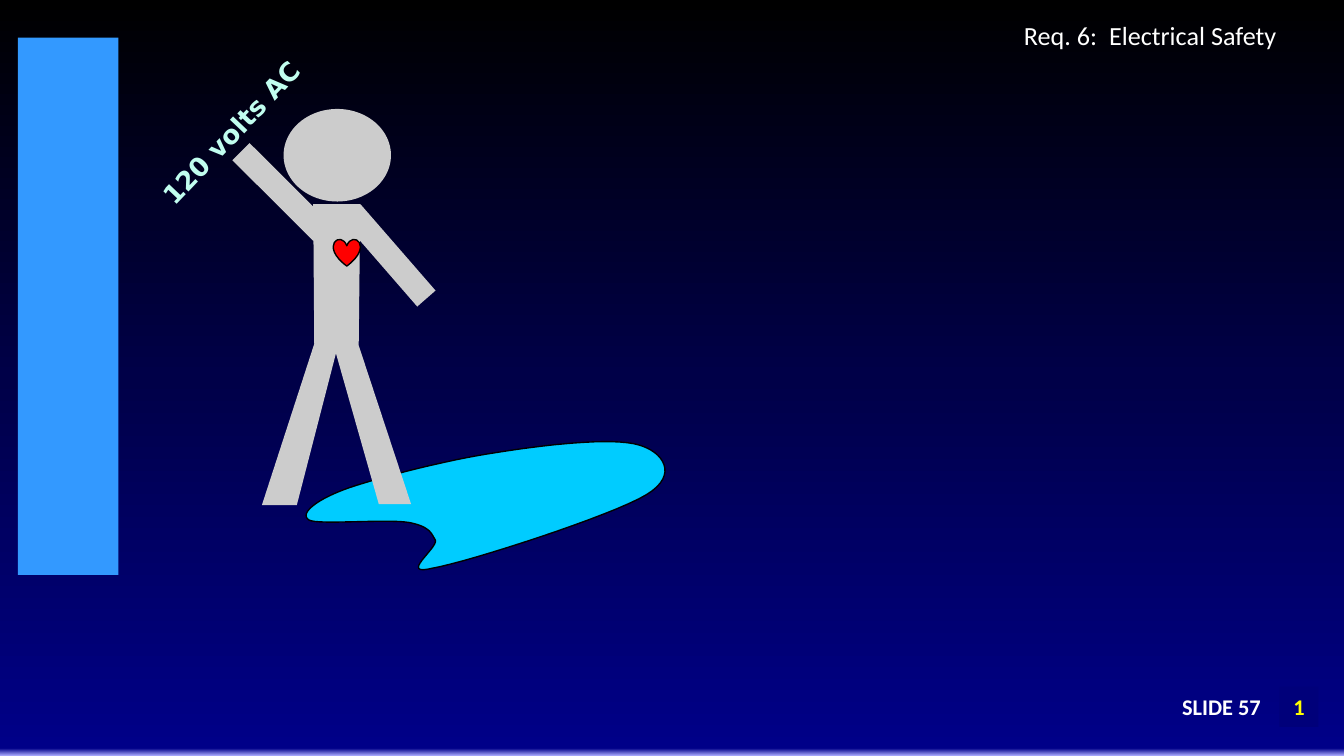
"""Build the electrical safety slide with a figure standing in a puddle."""
from lxml import etree
from pptx import Presentation
from pptx.dml.color import RGBColor
from pptx.enum.shapes import MSO_SHAPE as Preset
from pptx.enum.text import MSO_ANCHOR as Anchor, PP_ALIGN as Align
from pptx.oxml.ns import qn
from pptx.util import Cm, Pt

COLORS = {
    "glow": "ABABFF", "blue": "000088", "navy": "000048", "black": "000000",
    "band": "3399FF", "water": "00CCFF", "figure": "CCCCCC", "heart": "FF0000",
    "volts": "C1FEEF", "white": "FFFFFF", "number": "FFFF00", "number_box": "00007A",
}
WIDTH, HEIGHT = 25.4, 14.29
SKY_STOPS = [(0, "glow"), (1, "blue"), (50, "navy"), (100, "black")]
BODY = [(5.92, 3.86), (6.81, 3.86), (6.78, 6.53), (7.77, 9.53), (7.16, 9.53),
        (6.35, 6.68), (5.61, 9.55), (4.95, 9.55), (5.94, 6.5)]
PUDDLE_START = (9.35, 8.56)
PUDDLE_CURVES = [
    ((8.46, 8.69), (7.19, 9.02), (6.6, 9.22)),
    ((6.02, 9.42), (5.64, 9.7), (5.84, 9.83)),
    ((6.02, 9.93), (7.34, 9.8), (7.75, 9.88)),
    ((8.13, 9.96), (8.15, 10.08), (8.23, 10.21)),
    ((8.28, 10.36), (7.52, 10.9), (8.18, 10.74)),
    ((8.86, 10.62), (11.56, 9.75), (12.22, 9.35)),
    ((12.85, 8.97), (12.52, 8.53), (12.07, 8.41)),
    ((11.58, 8.26), (10.26, 8.41), PUDDLE_START),
]


def rgb(name):
    """Return the named colour."""
    return RGBColor.from_string(COLORS[name])


def style(shape, fill, line=None):
    """Give a shape a flat fill and an optional thin outline."""
    shape.shadow.inherit = False
    shape.fill.solid()
    shape.fill.fore_color.rgb = rgb(fill)
    if line:
        shape.line.color.rgb = rgb(line)
        shape.line.width = Pt(0.75)
    else:
        shape.line.fill.background()
    return shape


def add_preset(slide, preset, box, fill, line=None, rotation=0):
    """Add a preset shape, with its box in centimetres."""
    shape = slide.shapes.add_shape(preset, *map(Cm, box))
    shape.rotation = rotation
    return style(shape, fill, line)


def add_outline(slide, points, fill, line=None):
    """Add a closed freeform through points in centimetres."""
    corners = [(Cm(x), Cm(y)) for x, y in points]
    builder = slide.shapes.build_freeform(*corners[0])
    builder.add_line_segments(corners[1:], close=True)
    return style(builder.convert_to_shape(), fill, line)


def curve_points(start, curves, steps=16):
    """Return points along a chain of cubic Bezier curves."""
    points = [start]
    for control_a, control_b, end in curves:
        ends = list(zip(points[-1], control_a, control_b, end))
        for step in range(1, steps + 1):
            t = step / steps
            u = 1 - t
            points.append(tuple(
                a * u**3 + 3 * b * u * u * t + 3 * c * u * t * t + d * t**3
                for a, b, c, d in ends))
    return points[:-1]


def add_sky(slide):
    """Cover the slide with the vertical gradient."""
    sky = add_preset(slide, Preset.RECTANGLE, (0, 0, WIDTH, HEIGHT), "navy")
    sky.fill.gradient()
    sky.fill.gradient_angle = 90
    stops = sky._element.spPr.find(qn("a:gradFill")).find(qn("a:gsLst"))
    for stop in list(stops):
        stops.remove(stop)
    for position, name in SKY_STOPS:
        stop = etree.SubElement(stops, qn("a:gs"), pos=str(position * 1000))
        etree.SubElement(stop, qn("a:srgbClr"), val=COLORS[name])


def write(shape, text, size, color, align, font="Calibri", bold=False,
          insets=(0.2, 0.1), anchor=Anchor.MIDDLE, wrap=True):
    """Write one formatted line in a shape."""
    frame = shape.text_frame
    frame.word_wrap = wrap
    frame.vertical_anchor = anchor
    frame.margin_left = frame.margin_right = Cm(insets[0])
    frame.margin_top = frame.margin_bottom = Cm(insets[1])
    paragraph = frame.paragraphs[0]
    paragraph.text = text
    paragraph.alignment = align
    paragraph.font.name = font
    paragraph.font.size = Pt(size)
    paragraph.font.bold = bold
    paragraph.font.color.rgb = rgb(color)


def add_label(slide, box, *args, rotation=0, **options):
    """Add a text box, with its box in centimetres."""
    label = slide.shapes.add_textbox(*map(Cm, box))
    label.rotation = rotation
    write(label, *args, **options)


def add_figure(slide):
    """Draw the person with raised arm and heart."""
    add_outline(slide, BODY, "figure")
    add_preset(slide, Preset.RECTANGLE, (6.27, 4.6, 2.16, 0.46), "figure", rotation=49)
    add_preset(slide, Preset.RECTANGLE, (4.24, 3.4, 2.16, 0.46), "figure", rotation=44.9)
    add_preset(slide, Preset.OVAL, (5.36, 2.06, 2.03, 1.75), "figure")
    add_preset(slide, Preset.HEART, (6.3, 4.52, 0.51, 0.51), "heart", "black")


def main():
    """Build and save the slide."""
    presentation = Presentation()
    presentation.slide_width, presentation.slide_height = Cm(WIDTH), Cm(HEIGHT)
    slide = presentation.slides.add_slide(presentation.slide_layouts[6])
    add_sky(slide)
    add_preset(slide, Preset.RECTANGLE, (0.34, 0.71, 1.9, 10.16), "band")
    add_outline(slide, curve_points(PUDDLE_START, PUDDLE_CURVES), "water", "black")
    add_figure(slide)
    add_label(slide, (2.36, 2.06, 4.04, 0.86), "120 volts AC", 14, "volts", Align.LEFT,
              font="DejaVu Sans", bold=True, insets=(0.25, 0.13), anchor=Anchor.TOP,
              wrap=False, rotation=313.6)
    add_label(slide, (10.31, 0.36, 13.82, 0.61), "Req. 6:  Electrical Safety", 14,
              "white", Align.RIGHT, insets=(0, 0))
    number = add_preset(slide, Preset.RECTANGLE, (24.18, 12.98, 0.74, 0.76), "number_box")
    write(number, "1", 12, "number", Align.CENTER, bold=True)
    add_label(slide, (18.75, 12.88, 5.28, 0.94), "SLIDE 57", 12, "white", Align.RIGHT,
              bold=True)
    presentation.save("out.pptx")


if __name__ == "__main__":
    main()
